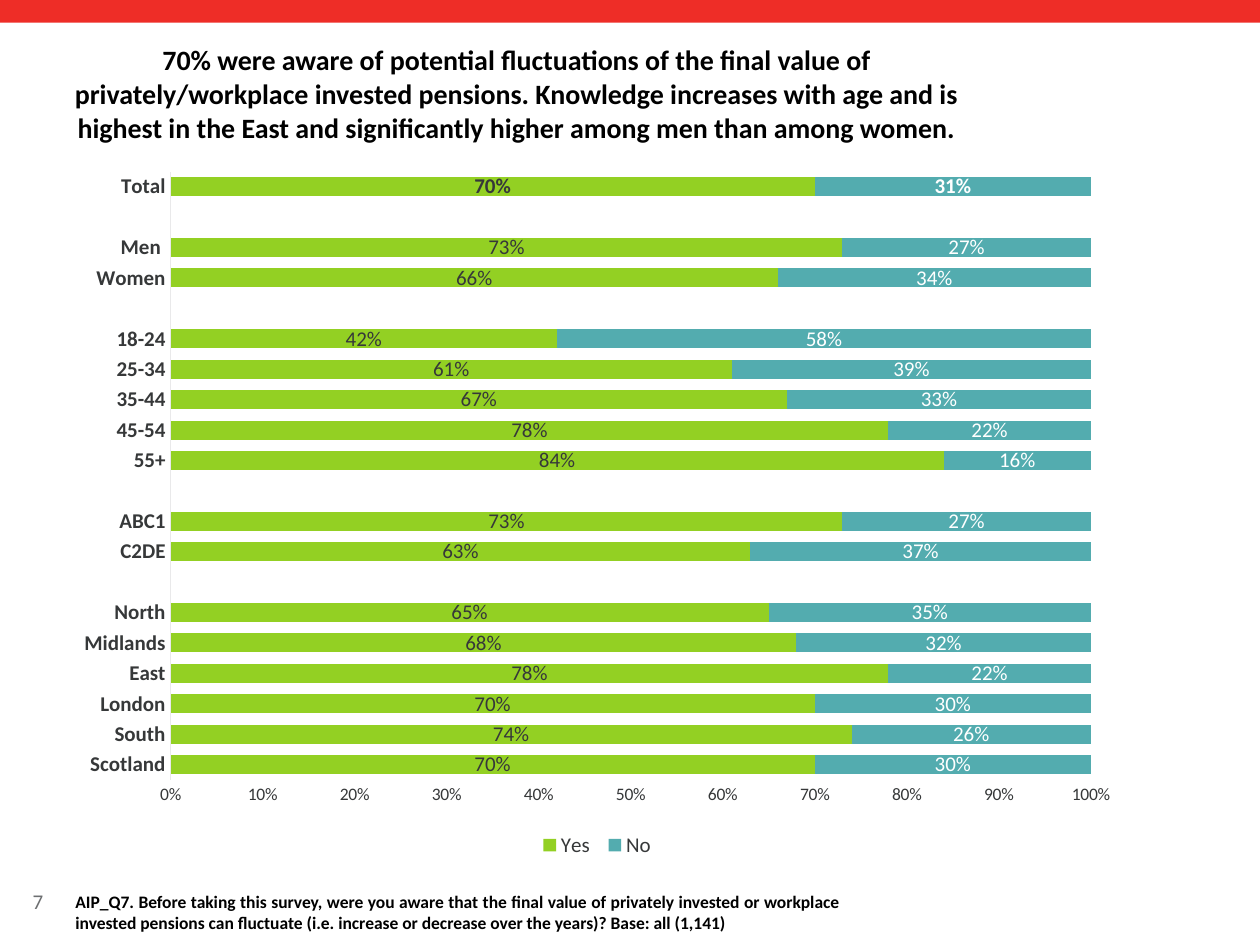
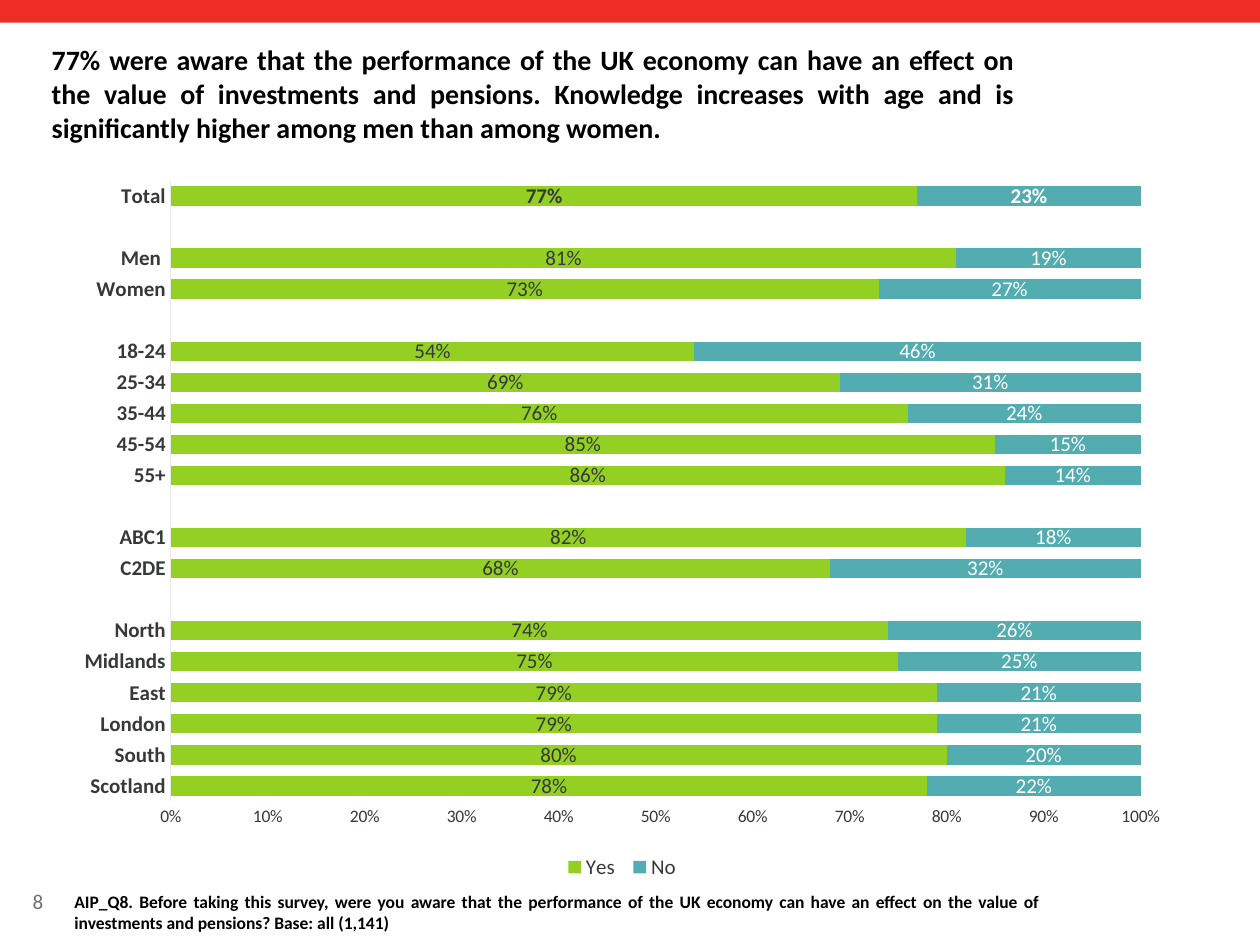
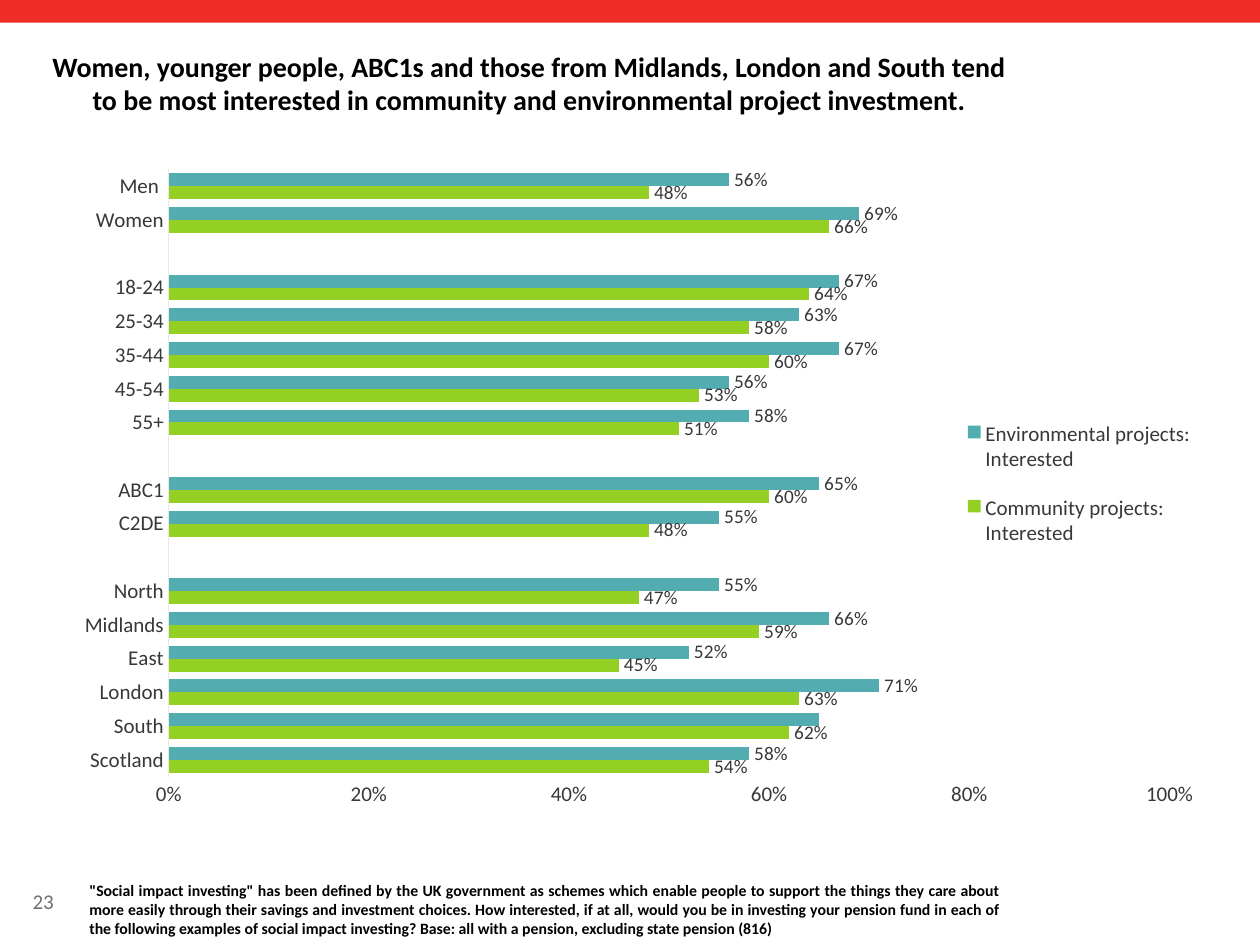
from pptx import Presentation
from pptx.chart.data import CategoryChartData
from pptx.dml.color import RGBColor
from pptx.enum.chart import XL_CHART_TYPE, XL_LABEL_POSITION, XL_LEGEND_POSITION, XL_TICK_MARK
from pptx.enum.shapes import MSO_SHAPE
from pptx.enum.text import MSO_ANCHOR, MSO_AUTO_SIZE, PP_ALIGN
from pptx.oxml import parse_xml
from pptx.oxml.ns import nsdecls, qn
from pptx.util import Pt

STACKED, CLUSTERED = XL_CHART_TYPE.BAR_STACKED, XL_CHART_TYPE.BAR_CLUSTERED
LABEL_CENTER, LABEL_END = XL_LABEL_POSITION.CENTER, XL_LABEL_POSITION.OUTSIDE_END
LEGEND_BOTTOM, LEGEND_RIGHT = XL_LEGEND_POSITION.BOTTOM, XL_LEGEND_POSITION.RIGHT
NO_TICK = XL_TICK_MARK.NONE
RECTANGLE = MSO_SHAPE.RECTANGLE
TOP, MIDDLE = MSO_ANCHOR.TOP, MSO_ANCHOR.MIDDLE
GROW = MSO_AUTO_SIZE.SHAPE_TO_FIT_TEXT
LEFT, CENTER, JUSTIFY = PP_ALIGN.LEFT, PP_ALIGN.CENTER, PP_ALIGN.JUSTIFY

FONT = "Calibri"
RED, GREEN, TEAL = "EE2D27", "93D023", "53ACAF"
BLACK, WHITE, DARK, GREY, PALE = "000000", "FFFFFF", "363839", "6D6F71", "E9E9EA"

GROUPS = [
    ["Men ", "Women"],
    ["18-24", "25-34", "35-44", "45-54", "55+"],
    ["ABC1", "C2DE"],
    ["North", "Midlands", "East", "London", "South", "Scotland"],
]

FLUCTUATION = {
    "Yes ": [[70], [73, 66], [42, 61, 67, 78, 84], [73, 63], [65, 68, 78, 70, 74, 70]],
    "No": [[31], [27, 34], [58, 39, 33, 22, 16], [27, 37], [35, 32, 22, 30, 26, 30]],
}
ECONOMY = {
    "Yes ": [[77], [81, 73], [54, 69, 76, 85, 86], [82, 68], [74, 75, 79, 79, 80, 78]],
    "No": [[23], [19, 27], [46, 31, 24, 15, 14], [18, 32], [26, 25, 21, 21, 20, 22]],
}
INTEREST = {
    "Community projects: Interested":
        [[48, 66], [64, 58, 60, 53, 51], [60, 48], [47, 59, 45, 63, 62, 54]],
    "Environmental projects: Interested":
        [[56, 69], [67, 63, 67, 56, 58], [65, 55], [55, 66, 52, 71, 65, 58]],
}


def rgb(hex_color):
    return RGBColor.from_string(hex_color)


def apply(target, values):
    for name, value in values.items():
        setattr(target, name, value)


def style_font(font, size, color, bold=False):
    apply(font, {"name": FONT, "size": Pt(size), "bold": bold})
    font.color.rgb = rgb(color)


def bottom_up(groups, gap):
    rows = []
    for group in groups:
        rows += ([gap] if rows else []) + group
    return rows[::-1]


def add_band(slide):
    band = slide.shapes.add_shape(RECTANGLE, 0, 0, Pt(720), Pt(13))
    band.shadow.inherit = False
    band.fill.solid()
    band.fill.fore_color.rgb = rgb(RED)
    band.line.fill.background()


def add_text(slide, box, text, size, color=BLACK, bold=True, align=LEFT, anchor=TOP, grow=False):
    frame = slide.shapes.add_textbox(*map(Pt, box)).text_frame
    apply(frame, {"word_wrap": True, "vertical_anchor": anchor})
    if grow:
        frame.auto_size = GROW
    paragraph = frame.paragraphs[0]
    paragraph.alignment = align
    run = paragraph.add_run()
    run.text = text
    style_font(run.font, size, color, bold)


def add_frame(prs, title, title_box, title_align, page, question, question_box,
              question_size=10, question_anchor=TOP):
    slide = prs.slides.add_slide(prs.slide_layouts[6])
    add_band(slide)
    add_text(slide, title_box, title, 16, align=title_align)
    add_text(slide, (11.5, 500.5, 162, 29), page, 12, GREY, False, anchor=MIDDLE)
    add_text(slide, question_box, question, question_size, align=JUSTIFY,
             anchor=question_anchor, grow=True)
    return slide


def set_layout(parent, index, box, inner=False):
    for old in parent.findall(qn("c:layout")):
        parent.remove(old)
    target = '<c:layoutTarget val="inner"/>' if inner else ""
    modes = "".join(f'<c:{edge}Mode val="edge"/>' for edge in "xy")
    sizes = "".join(f'<c:{side} val="{value}"/>' for side, value in zip("xywh", box))
    parent.insert(index, parse_xml(
        f'<c:layout {nsdecls("c")}><c:manualLayout>{target}{modes}{sizes}'
        '</c:manualLayout></c:layout>'))


def style_axes(chart, category_bold, value_size, step):
    categories, values = chart.category_axis, chart.value_axis
    for axis in (categories, values):
        apply(axis, {"major_tick_mark": NO_TICK, "minor_tick_mark": NO_TICK,
                     "has_major_gridlines": False})
    style_font(categories.tick_labels.font, 12, DARK, category_bold)
    categories.format.line.color.rgb = rgb(PALE)
    categories.format.line.width = Pt(0.75)
    apply(values, {"minimum_scale": 0, "maximum_scale": 1, "major_unit": step})
    apply(values.tick_labels, {"number_format": "0%", "number_format_is_linked": False})
    style_font(values.tick_labels.font, value_size, DARK)
    values.format.line.fill.background()


def style_series(series, fill, label_size, label_color, label_position):
    series.format.fill.solid()
    series.format.fill.fore_color.rgb = rgb(fill)
    series.invert_if_negative = False
    labels = series.data_labels
    apply(labels, {"show_value": True, "position": label_position,
                   "number_format": "0%", "number_format_is_linked": False})
    style_font(labels.font, label_size, label_color)


def add_bars(slide, kind, box, groups, answers, legend_position,
             category_bold, value_size, step):
    data = CategoryChartData(number_format="0%")
    data.categories = bottom_up(groups, "")
    for name, percents in answers.items():
        data.add_series(name, [p if p is None else p / 100 for p in bottom_up(percents, None)])
    chart = slide.shapes.add_chart(kind, *map(Pt, box), data).chart
    style_font(chart.font, 10, DARK)
    apply(chart, {"has_title": False, "has_legend": True})
    apply(chart.legend, {"position": legend_position, "include_in_layout": False})
    style_font(chart.legend.font, 12, DARK)
    apply(chart.plots[0], {"gap_width": 60, "vary_by_categories": False})
    style_axes(chart, category_bold, value_size, step)
    return chart


def add_awareness_chart(slide, box, answers):
    groups = [["Total"]] + GROUPS
    chart = add_bars(slide, STACKED, box, groups, answers, LEGEND_BOTTOM, True, 10, 0.1)
    total = len(bottom_up(groups, "")) - 1
    for series, fill, label_color in zip(chart.plots[0].series, (GREEN, TEAL), (DARK, WHITE)):
        style_series(series, fill, 12, label_color, LABEL_CENTER)
        total_label = series.points[total].data_label
        style_font(total_label.font, 12, label_color, True)
        total_label.position = LABEL_CENTER


def add_interest_chart(slide, box, answers):
    chart = add_bars(slide, CLUSTERED, box, GROUPS, answers, LEGEND_RIGHT, False, 12, 0.2)
    community, environment = chart.plots[0].series
    style_series(community, GREEN, 11, DARK, LABEL_END)
    style_series(environment, TEAL, 11, DARK, LABEL_END)
    south = bottom_up(GROUPS, "").index("South")
    environment.data_labels._element.insert(0, parse_xml(
        f'<c:dLbl {nsdecls("c")}><c:idx val="{south}"/><c:delete val="1"/></c:dLbl>'))
    set_layout(chart._chartSpace.chart.plotArea, 0, (0.14, 0.03, 0.83, 0.88), inner=True)
    set_layout(chart.legend._element, 1, (0.8, 0.36, 0.19, 0.25))


def main():
    prs = Presentation()
    apply(prs, {"slide_width": Pt(720), "slide_height": Pt(540)})

    fluctuation = add_frame(
        prs,
        "70% were aware of potential fluctuations of the final value of privately/workplace "
        "invested pensions. Knowledge increases with age and is highest in the East and "
        "significantly higher among men than among women.",
        (22.5, 21, 545.5, 69), CENTER, "7",
        "AIP_Q7. Before taking this survey, were you aware that the final value of privately "
        "invested or workplace invested pensions can fluctuate (i.e. increase or decrease over "
        "the years)? Base: all (1,141)",
        (36, 505.5, 450.5, 31.5))
    add_awareness_chart(fluctuation, (36, 90, 610.5, 403), FLUCTUATION)

    economy = add_frame(
        prs,
        "77% were aware that the performance of the UK economy can have an effect on the value "
        "of investments and pensions. Knowledge increases with age and is significantly higher "
        "among men than among women.",
        (22.5, 21, 564.5, 69), JUSTIFY, "8",
        "AIP_Q8. Before taking this survey, were you aware that the performance of the UK "
        "economy can have an effect on the value of investments and pensions? Base: all (1,141)",
        (35.5, 505.5, 565, 31.5))
    add_awareness_chart(economy, (35.5, 95, 640, 410.5), ECONOMY)

    interest = add_frame(
        prs,
        "Women, younger people, ABC1s and those from Midlands, London and South tend to be most "
        "interested in community and environmental project investment.",
        (22.5, 24.5, 560, 54.5), CENTER, "23",
        "\"Social impact investing\" has been defined by the UK government as schemes which "
        "enable people to support the things they care about more easily through their savings "
        "and investment choices. How interested, if at all, would you be in investing your "
        "pension fund in each of the following examples of social impact investing? Base: all "
        "with a pension, excluding state pension (816)",
        (44, 499.5, 534, 40.5), 9, MIDDLE)
    add_interest_chart(interest, (0, 85, 689, 394.5), INTEREST)

    prs.save("out.pptx")


if __name__ == "__main__":
    main()
